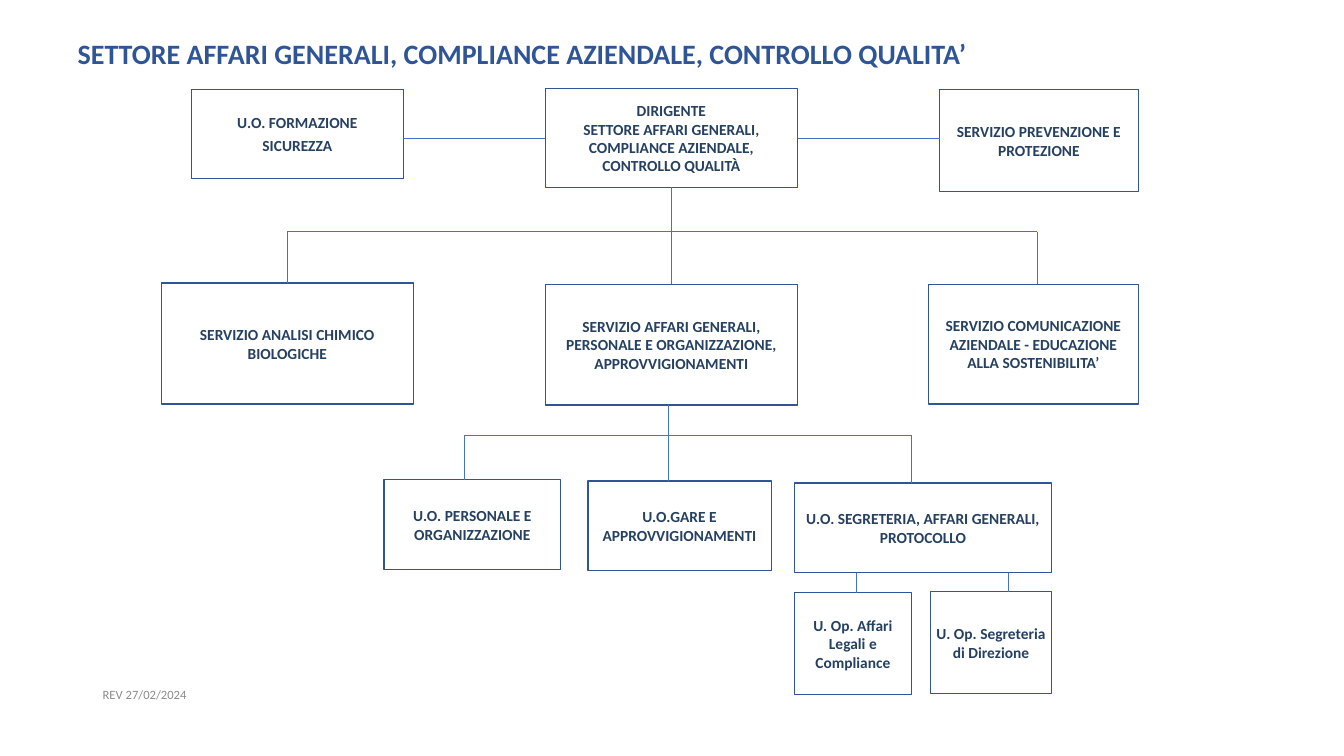
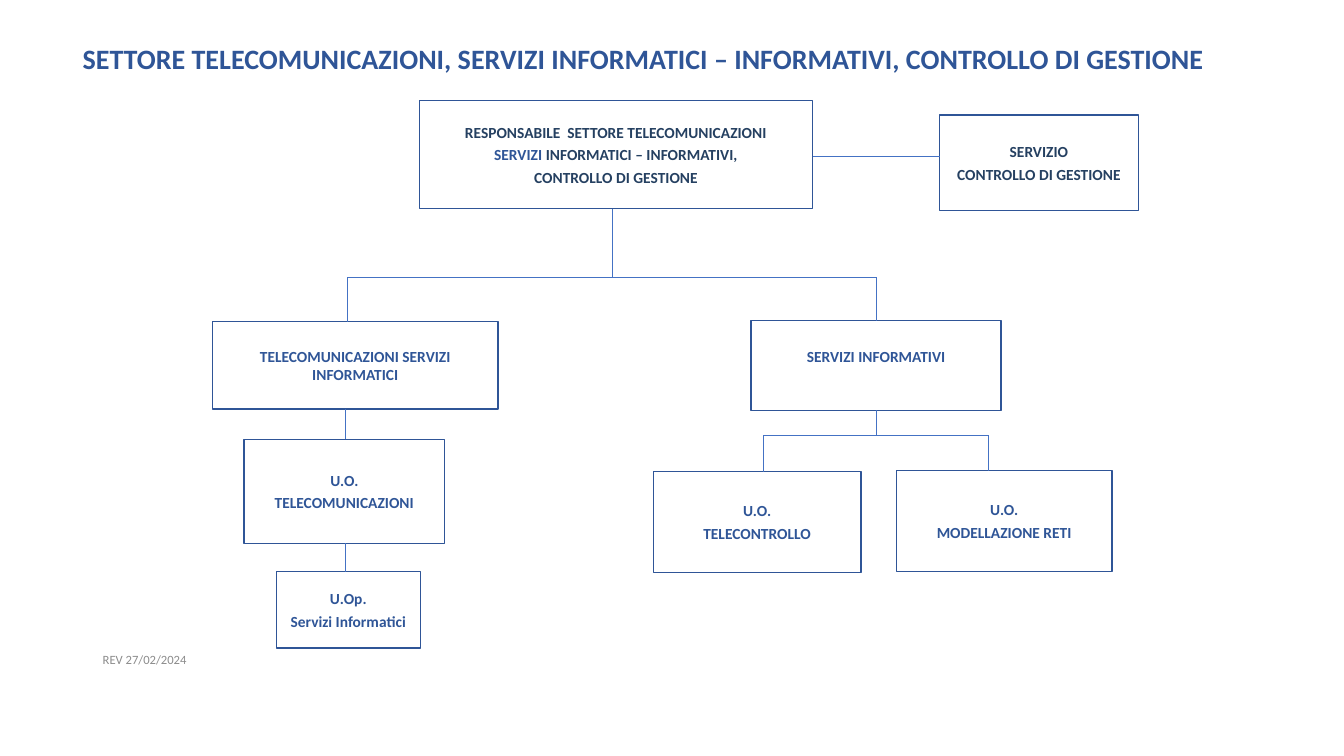
"""Builds two organisation charts, one per company sector."""
from dataclasses import dataclass

from lxml.etree import SubElement
from pptx import Presentation
from pptx.dml.color import RGBColor
from pptx.enum.shapes import MSO_CONNECTOR, MSO_SHAPE
from pptx.enum.text import MSO_ANCHOR, PP_ALIGN
from pptx.oxml.ns import qn
from pptx.util import Emu, Pt


@dataclass(frozen=True)
class Theme:
    """Colours, type sizes and line widths."""
    font: str = "Calibri"
    blue: RGBColor = RGBColor(0x2F, 0x55, 0x97)
    navy: RGBColor = RGBColor(0x25, 0x40, 0x61)
    link: RGBColor = RGBColor(0x44, 0x72, 0xC4)
    grey: RGBColor = RGBColor(0x8C, 0x8C, 0x8C)
    white: RGBColor = RGBColor(0xFF, 0xFF, 0xFF)
    title_size: Pt = Pt(20)
    unit_size: Pt = Pt(11)
    footer_size: Pt = Pt(9)
    unit_gap: Pt = Pt(3)
    border: Pt = Pt(1)
    link_width: Pt = Pt(0.5)


@dataclass(frozen=True)
class Box:
    """A rectangle in px."""
    left: int
    top: int
    width: int
    height: int

    @property
    def right(self):
        """Return the right edge."""
        return self.left + self.width

    @property
    def bottom(self):
        """Return the bottom edge."""
        return self.top + self.height

    def inner(self, left, top, width, height):
        """Return a box measured from this box's corner."""
        return Box(self.left + left, self.top + top, width, height)

    def lengths(self):
        """Return left, top, width and height in EMU."""
        return [px(value) for value in (self.left, self.top, self.width, self.height)]


THEME = Theme()
PX = 9144
REVISION = "REV 27/02/2024"


def px(value):
    """Turn px into EMU."""
    return Emu(value * PX)


def set_margins(frame, left, top, right, bottom):
    """Set the text margins of a frame in px."""
    frame.margin_left, frame.margin_top = px(left), px(top)
    frame.margin_right, frame.margin_bottom = px(right), px(bottom)


def style_font(paragraph, size, color, bold):
    """Set the font of a whole paragraph."""
    font = paragraph.font
    font.name, font.size, font.bold = THEME.font, size, bold
    font.color.rgb = color


def add_label(slide, box, text, size, color, bold, margins):
    """Add a left-aligned line of text, centred vertically in its box."""
    frame = slide.shapes.add_textbox(*box.lengths()).text_frame
    frame.word_wrap = True
    frame.vertical_anchor = MSO_ANCHOR.MIDDLE
    set_margins(frame, *margins)
    paragraph = frame.paragraphs[0]
    paragraph.text = text
    style_font(paragraph, size, color, bold)


def add_title(slide, box, text):
    """Add the slide title."""
    add_label(slide, box, text, THEME.title_size, THEME.blue, True, (9, 0, 0, 0))


def add_footer(slide, box):
    """Add the revision date."""
    add_label(slide, box, REVISION, THEME.footer_size, THEME.grey, False, (10, 5, 10, 5))


def add_unit(slide, box, lines, color=THEME.navy, bottom_margin=5):
    """Add an outlined unit, where a line is text or (text, colour) runs."""
    shape = slide.shapes.add_shape(MSO_SHAPE.RECTANGLE, *box.lengths())
    shape.shadow.inherit = False
    shape.fill.solid()
    shape.fill.fore_color.rgb = THEME.white
    shape.line.color.rgb = THEME.blue
    shape.line.width = THEME.border
    frame = shape.text_frame
    frame.word_wrap = True
    frame.vertical_anchor = MSO_ANCHOR.MIDDLE
    set_margins(frame, 5, 5, 5, bottom_margin)
    for index, line in enumerate(lines):
        paragraph = frame.add_paragraph() if index else frame.paragraphs[0]
        paragraph.alignment = PP_ALIGN.CENTER
        paragraph.space_after = THEME.unit_gap
        style_font(paragraph, THEME.unit_size, color, True)
        if isinstance(line, str):
            paragraph.text = line
            continue
        for text, run_color in line:
            run = paragraph.add_run()
            run.text = text
            run.font.color.rgb = run_color
    return box


def add_link(slide, start_x, start_y, end_x, end_y):
    """Add a thin straight line between two points."""
    connector = slide.shapes.add_connector(
        MSO_CONNECTOR.STRAIGHT, px(start_x), px(start_y), px(end_x), px(end_y))
    connector.line.color.rgb = THEME.link
    connector.line.width = THEME.link_width
    SubElement(connector._element.spPr, qn("a:effectLst"))


def link_across(slide, first, second, y):
    """Join two neighbouring units at a height."""
    add_link(slide, first.right, y, second.left, y)


def link_down(slide, upper, lower, x):
    """Join two stacked units."""
    add_link(slide, x, upper.bottom, x, lower.top)


def add_branch(slide, parent, trunk_x, bus_y, drops):
    """Join a parent to its children, given as (child, x), through a bus."""
    add_link(slide, trunk_x, parent.bottom, trunk_x, bus_y)
    add_link(slide, drops[0][1], bus_y, drops[-1][1], bus_y)
    for child, x in drops:
        add_link(slide, x, bus_y, x, child.top)


def add_general_affairs_chart(slide, area):
    """Draw the chart of the general affairs sector in its area."""
    def unit(left, top, width, height, *lines):
        """Add a unit measured from the area."""
        return add_unit(slide, area.inner(left, top, width, height), lines)

    director = unit(381, 0, 250, 98, "DIRIGENTE\vSETTORE AFFARI GENERALI,\v"
                    "COMPLIANCE AZIENDALE,\vCONTROLLO QUALITÀ")
    training = unit(30, 1, 210, 88, "U.O. FORMAZIONE", "SICUREZZA")
    prevention = unit(772, 1, 197, 101, "SERVIZIO PREVENZIONE E PROTEZIONE")
    analysis = unit(0, 193, 250, 120, "SERVIZIO ANALISI CHIMICO BIOLOGICHE")
    affairs = unit(381, 194, 250, 120, "SERVIZIO AFFARI GENERALI, "
                   "PERSONALE E ORGANIZZAZIONE, APPROVVIGIONAMENTI")
    communication = unit(761, 194, 208, 119, "SERVIZIO COMUNICAZIONE AZIENDALE - "
                         "EDUCAZIONE ALLA SOSTENIBILITA’")
    personnel = unit(221, 388, 175, 89, "U.O. PERSONALE E ORGANIZZAZIONE")
    tenders = unit(423, 389, 182, 89, "U.O.GARE E APPROVVIGIONAMENTI")
    secretariat = unit(628, 391, 255, 89, "U.O. SEGRETERIA, AFFARI GENERALI, PROTOCOLLO")
    legal = unit(628, 500, 116, 101, "U. Op. Affari Legali e Compliance")
    direction = unit(763, 499, 120, 101, "U. Op. Segreteria di Direzione")

    x, y = area.left, area.top
    link_across(slide, training, director, y + 49)
    link_across(slide, director, prevention, y + 49)
    add_branch(slide, director, x + 506, y + 142,
               [(analysis, x + 125), (affairs, x + 506), (communication, x + 869)])
    add_branch(slide, affairs, x + 503, y + 344,
               [(personnel, x + 301), (tenders, x + 503), (secretariat, x + 744)])
    link_down(slide, secretariat, legal, x + 689)
    link_down(slide, secretariat, direction, x + 840)


def add_telecommunications_chart(slide, area):
    """Draw the chart of the telecommunications sector in its area."""
    def unit(left, top, width, height, *lines, color=THEME.blue, bottom_margin=5):
        """Add a unit measured from the area."""
        box = area.inner(left, top, width, height)
        return add_unit(slide, box, lines, color, bottom_margin)

    manager = unit(205, 0, 390, 107, "RESPONSABILE  SETTORE TELECOMUNICAZIONI",
                   [("SERVIZI", THEME.blue), (" INFORMATICI – INFORMATIVI,", THEME.navy)],
                   "CONTROLLO DI GESTIONE", color=THEME.navy)
    control = unit(721, 14, 197, 95, "SERVIZIO", "CONTROLLO DI GESTIONE", color=THEME.navy)
    telecom = unit(0, 219, 283, 87, "TELECOMUNICAZIONI SERVIZI INFORMATICI")
    information = unit(534, 218, 248, 89, "SERVIZI INFORMATIVI", bottom_margin=23)
    telecom_unit = unit(31, 336, 199, 103, "U.O.", "TELECOMUNICAZIONI")
    computing = unit(63, 467, 143, 76, "U.Op.", "Servizi Informatici")
    remote_control = unit(437, 368, 206, 100, "U.O.", "TELECONTROLLO")
    modelling = unit(678, 367, 214, 100, "U.O.", "MODELLAZIONE RETI")

    x, y = area.left, area.top
    link_across(slide, manager, control, y + 55)
    add_branch(slide, manager, x + 396, y + 175,
               [(telecom, x + 134), (information, x + 658)])
    add_branch(slide, information, x + 658, y + 332,
               [(remote_control, x + 546), (modelling, x + 769)])
    link_down(slide, telecom, telecom_unit, x + 132)
    link_down(slide, telecom_unit, computing, x + 132)


def add_sector_slide(presentation, title, title_box, add_chart, chart_area, footer_box):
    """Add a slide with a title, an organisation chart and a revision date."""
    slide = presentation.slides.add_slide(presentation.slide_layouts[6])
    add_title(slide, title_box, title)
    add_chart(slide, chart_area)
    add_footer(slide, footer_box)


def main():
    """Build and save the presentation."""
    presentation = Presentation()
    presentation.slide_width, presentation.slide_height = px(1333), px(750)
    add_sector_slide(
        presentation, "SETTORE AFFARI GENERALI, COMPLIANCE AZIENDALE, CONTROLLO QUALITA’",
        Box(68, 28, 1191, 50), add_general_affairs_chart,
        Box(160, 88, 969, 601), Box(92, 656, 477, 65))
    add_sector_slide(
        presentation,
        "SETTORE TELECOMUNICAZIONI, SERVIZI INFORMATICI – INFORMATIVI, CONTROLLO DI GESTIONE",
        Box(73, 28, 1183, 60), add_telecommunications_chart,
        Box(211, 100, 918, 543), Box(92, 623, 362, 63))
    presentation.save("out.pptx")


if __name__ == "__main__":
    main()
